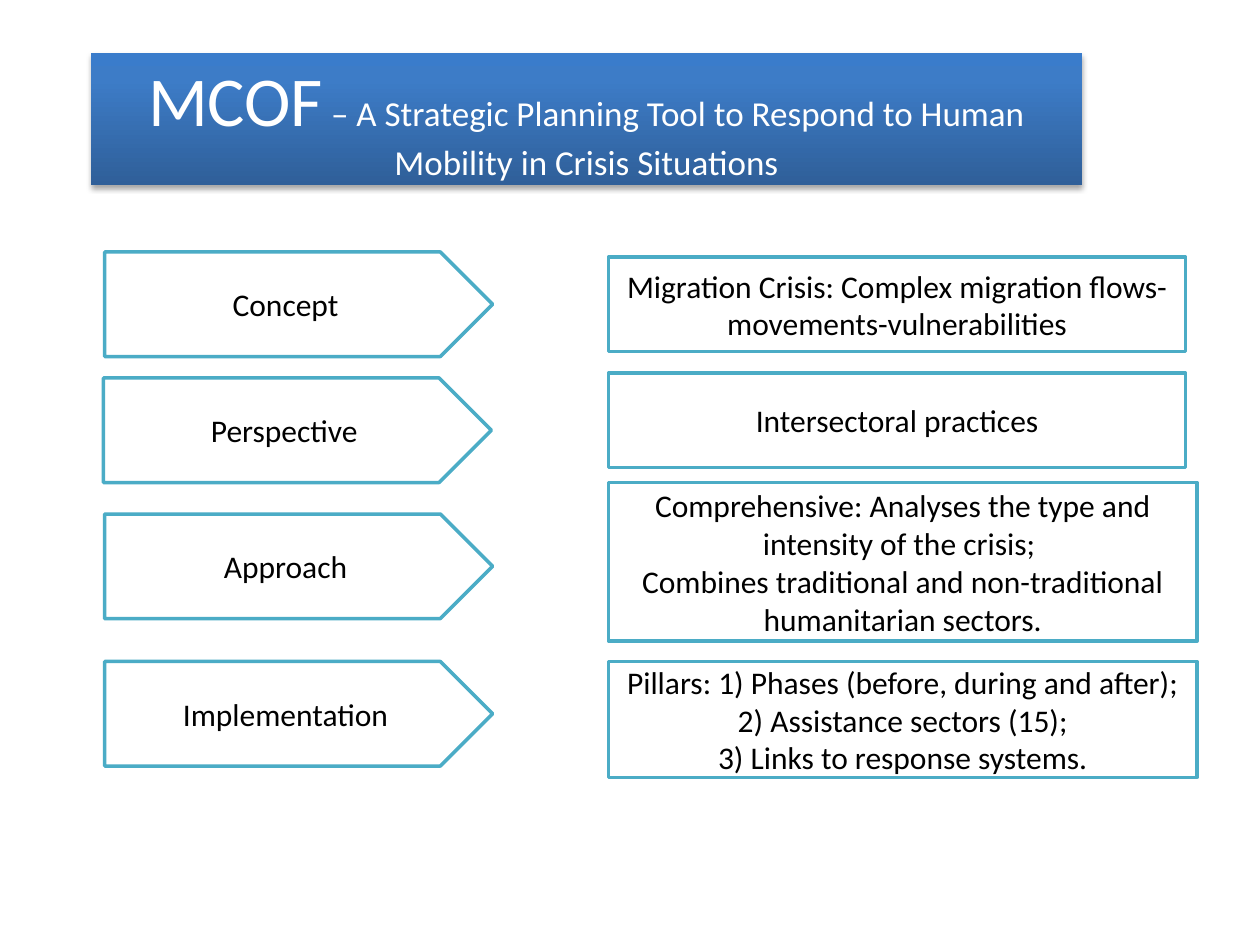
import copy

import pptx
import pptx.dml.color
import pptx.enum.shapes
import pptx.enum.text
import pptx.oxml
import pptx.oxml.ns
import pptx.util
from pptx.util import Inches

KIND = pptx.enum.shapes.MSO_SHAPE


class Theme:
    face = "Calibri"
    big, mid, small = 40, 20, 18
    white, black, teal = "FFFFFF", "000000", "4BACC6"
    fade = [(0, "2F5F99"), (0.8, "3D7CC7"), (1, "3A7CCB")]
    edge = 2


def tint(code):
    return pptx.dml.color.RGBColor.from_string(code)


class Deck:
    def __init__(self, theme):
        self.theme = theme
        self.file = pptx.Presentation()
        self.file.slide_width, self.file.slide_height = Inches(10), Inches(7.5)
        self.slide = self.file.slides.add_slide(self.file.slide_layouts[6])

    def shape(self, kind, spot, paras, color):
        """Add a shape; each paragraph is a list of (text, size) runs."""
        item = self.slide.shapes.add_shape(kind, *map(Inches, spot))
        item.shadow.inherit = False
        frame = item.text_frame
        form = {"word_wrap": True,
                "vertical_anchor": pptx.enum.text.MSO_ANCHOR.MIDDLE}
        for name, value in form.items():
            setattr(frame, name, value)
        for i, runs in enumerate(paras):
            para = frame.add_paragraph() if i else frame.paragraphs[0]
            para.alignment = pptx.enum.text.PP_ALIGN.CENTER
            for text, size in runs:
                run = para.add_run()
                run.text = text
                style = {"name": self.theme.face, "size": pptx.util.Pt(size)}
                for name, value in style.items():
                    setattr(run.font, name, value)
                run.font.color.rgb = tint(color)
        return item

    def box(self, kind, spot, lines):
        theme = self.theme
        paras = [[(line, theme.small)] for line in lines]
        item = self.shape(kind, spot, paras, theme.black)
        item.fill.solid()
        item.fill.fore_color.rgb = tint(theme.white)
        item.line.color.rgb = tint(theme.teal)
        item.line.width = pptx.util.Pt(theme.edge)

    def banner(self, spot, runs):
        item = self.shape(KIND.RECTANGLE, spot, [runs], self.theme.white)
        item.line.fill.background()

        # Three-stop fade, dark at the foot
        item.fill.gradient()
        item.fill.gradient_angle = 90
        props = item._element.spPr
        stops = props.find(".//" + pptx.oxml.ns.qn("a:gsLst"))
        stops.append(copy.deepcopy(stops[-1]))
        for stop, (place, color) in zip(item.fill.gradient_stops, self.theme.fade):
            stop.position = place
            stop.color.rgb = tint(color)

        # Soft shadow below
        props.find(pptx.oxml.ns.qn("a:effectLst")).append(pptx.oxml.parse_xml(
            f'<a:outerShdw {pptx.oxml.ns.nsdecls("a")} blurRad="40000" '
            'dist="23000" dir="5400000" rotWithShape="0">'
            f'<a:srgbClr val="{self.theme.black}"><a:alpha val="35000"/>'
            '</a:srgbClr></a:outerShdw>'))


def main():
    theme = Theme()
    deck = Deck(theme)

    # Title
    deck.banner((0.72, 0.42, 7.87, 1.05), [
        ("MCOF", theme.big),
        (" – A Strategic Planning Tool to Respond to Human Mobility "
         "in Crisis Situations", theme.mid)])

    # Rows: label, its left and top, then box top, width, height and lines
    rows = [
        ("Concept", 0.83, 2, 2.04, 4.58, 0.75,
         ["Migration Crisis: Complex migration flows-movements-vulnerabilities"]),
        ("Perspective", 0.82, 3, 2.96, 4.58, 0.75, ["Intersectoral practices"]),
        ("Approach", 0.83, 4.08, 3.83, 4.67, 1.26,
         ["Comprehensive: Analyses the type and intensity of the crisis; ",
          "Combines traditional and non-traditional humanitarian sectors."]),
        ("Implementation", 0.83, 5.25, 5.25, 4.67, 0.92,
         ["Pillars: 1) Phases (before, during and after);",
          "2) Assistance sectors (15);",
          "3) Links to response systems."]),
    ]
    for label, left, top, start, width, height, lines in rows:
        deck.box(KIND.PENTAGON, (left, top, 3.08, 0.83), [label])
        deck.box(KIND.RECTANGLE, (4.83, start, width, height), lines)

    deck.file.save("out.pptx")


if __name__ == "__main__":
    main()
